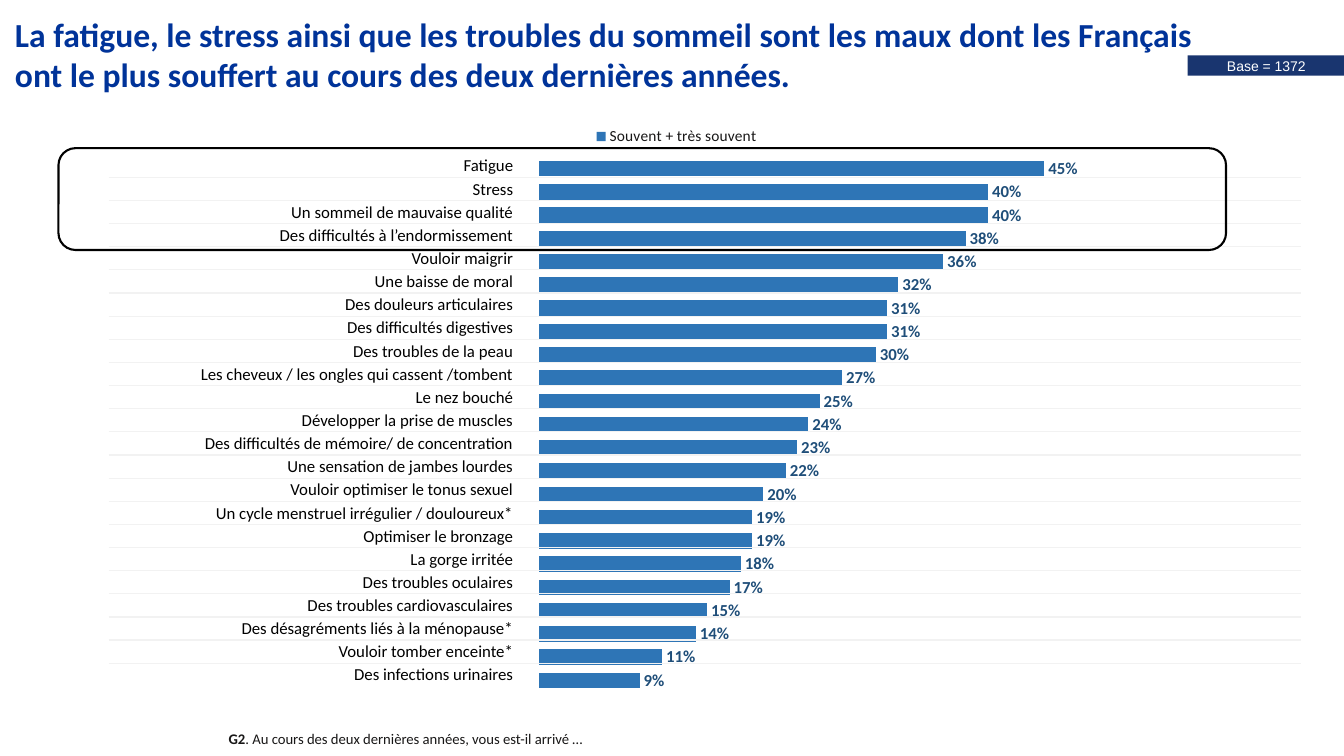
from dataclasses import dataclass

from lxml import etree
from pptx import Presentation
from pptx.chart.data import CategoryChartData
from pptx.dml.color import RGBColor
from pptx.enum.chart import XL_CHART_TYPE, XL_LABEL_POSITION, XL_LEGEND_POSITION
from pptx.enum.shapes import MSO_SHAPE
from pptx.enum.text import MSO_ANCHOR, PP_ALIGN
from pptx.oxml import parse_xml
from pptx.oxml.ns import qn
from pptx.util import Inches, Pt

BAR_CLUSTERED = XL_CHART_TYPE.BAR_CLUSTERED
OUTSIDE_END = XL_LABEL_POSITION.OUTSIDE_END
LEGEND_TOP = XL_LEGEND_POSITION.TOP
BADGE_SHAPE = MSO_SHAPE.ROUND_1_RECTANGLE
FRAME_SHAPE = MSO_SHAPE.ROUNDED_RECTANGLE
MIDDLE = MSO_ANCHOR.MIDDLE
LEFT, CENTER, RIGHT, JUSTIFY = PP_ALIGN.LEFT, PP_ALIGN.CENTER, PP_ALIGN.RIGHT, PP_ALIGN.JUSTIFY
DRAWING = "http://schemas.openxmlformats.org/drawingml/2006/main"
CHART = "http://schemas.openxmlformats.org/drawingml/2006/chart"
PLAIN_TABLE_STYLE = "{2D5ABB26-0587-4C30-8999-92F81FD0307C}"
PERCENT = '##0"%"'


@dataclass(frozen=True)
class Theme:
    """Colours, fonts and type sizes of the slide."""
    title: str = "003399"
    bar: str = "2E75B6"
    value: str = "1F4E79"
    badge: str = "002060"
    rule: str = "F2F2F2"
    ink: str = "181717"
    black: str = "000000"
    white: str = "FFFFFF"
    body_font: str = "Calibri"
    badge_font: str = "Arial"
    title_size: float = 24
    label_size: float = 12
    legend_size: float = 11
    note_size: float = 10.5
    small_size: float = 10


THEME = Theme()

AILMENTS = [
    ("Fatigue", 45),
    ("Stress", 40),
    ("Un sommeil de mauvaise qualité", 40),
    ("Des difficultés à l’endormissement", 38),
    ("Vouloir maigrir", 36),
    ("Une baisse de moral", 32),
    ("Des douleurs articulaires", 31),
    ("Des difficultés digestives", 31),
    ("Des troubles de la peau", 30),
    ("Les cheveux / les ongles qui cassent /tombent", 27),
    ("Le nez bouché", 25),
    ("Développer la prise de muscles", 24),
    ("Des difficultés de mémoire/ de concentration", 23),
    ("Une sensation de jambes lourdes", 22),
    ("Vouloir optimiser le tonus sexuel", 20),
    ("Un cycle menstruel irrégulier / douloureux*", 19),
    ("Optimiser le bronzage", 19),
    ("La gorge irritée", 18),
    ("Des troubles oculaires", 17),
    ("Des troubles cardiovasculaires", 15),
    ("Des désagréments liés à la ménopause*", 14),
    ("Vouloir tomber enceinte*", 11),
    ("Des infections urinaires", 9),
]


def set_font(font, size, color, bold=False, name=THEME.body_font):
    """Give a font its size, colour, weight and typeface."""
    font.size, font.bold, font.name = Pt(size), bold, name
    font.color.rgb = RGBColor.from_string(color)


def add_text(page, box, align=LEFT):
    """Add a wrapping text box and return its first paragraph."""
    frame = page.shapes.add_textbox(*map(Inches, box)).text_frame
    frame.word_wrap = True
    frame.paragraphs[0].alignment = align
    return frame.paragraphs[0]


def add_title(page, box):
    """Write the headline."""
    para = add_text(page, box)
    para.text = ("La fatigue, le stress ainsi que les troubles du sommeil sont les maux dont les "
                 "Français ont le plus souffert au cours des deux dernières années.")
    set_font(para.font, THEME.title_size, THEME.title, bold=True)


def add_question(page, box):
    """Write the survey question below the chart."""
    para = add_text(page, box, JUSTIFY)
    para.line_spacing = 1.07
    for text, bold in (("G2", True), (". Au cours des deux dernières années, vous est-il arrivé …", False)):
        span = para.add_run()
        span.text = text
        set_font(span.font, THEME.note_size, THEME.ink, bold)


def set_layout(parent, **places):
    """Pin a chart part at fractions of the chart area."""
    for old in parent.findall(qn("c:layout")):
        parent.remove(old)
    parts = "".join(f'<c:{key} val="{value}"/>' for key, value in places.items())
    layout = parse_xml(f'<c:layout xmlns:c="{CHART}"><c:manualLayout>{parts}</c:manualLayout></c:layout>')
    return layout


def add_bars(page, box):
    """Draw the bar chart with hidden axes."""
    data = CategoryChartData(number_format=PERCENT)
    data.categories = [str(rank) for rank in range(1, len(AILMENTS) + 1)]
    data.add_series("Souvent + très souvent", [share for _, share in AILMENTS])
    chart = page.shapes.add_chart(BAR_CLUSTERED, *map(Inches, box), data).chart
    set_font(chart.font, THEME.small_size, THEME.black)
    chart.has_title = False
    chart.category_axis.reverse_order = True
    chart.value_axis.minimum_scale, chart.value_axis.maximum_scale = 0, 50
    chart.value_axis.has_major_gridlines = False
    chart.category_axis.visible = chart.value_axis.visible = False

    plot = chart.plots[0]
    plot.gap_width, plot.vary_by_categories = 50, False
    bars = plot.series[0]
    bars.format.fill.solid()
    bars.format.fill.fore_color.rgb = RGBColor.from_string(THEME.bar)
    labels = bars.data_labels
    labels.show_value, labels.position = True, OUTSIDE_END
    labels.number_format, labels.number_format_is_linked = PERCENT, False
    set_font(labels.font, THEME.label_size, THEME.value, bold=True)

    chart.has_legend = True
    legend = chart.legend
    legend.position, legend.include_in_layout = LEGEND_TOP, False
    set_font(legend.font, THEME.legend_size, THEME.ink)
    legend_node = legend._element
    legend_node.find(qn("c:legendPos")).addnext(
        set_layout(legend_node, xMode="edge", yMode="edge", x=0.47, y=0.01))
    area = chart._chartSpace.chart.plotArea
    area.insert(0, set_layout(area, layoutTarget="inner", xMode="edge", yMode="edge",
                              x=0.43, y=0.064, w=0.425, h=0.852))


def add_rule(cell, side):
    """Draw a thin rule on one side of a table cell."""
    cell._tc.get_or_add_tcPr().append(parse_xml(
        f'<a:{side} xmlns:a="{DRAWING}" w="{Pt(1)}"><a:solidFill>'
        f'<a:srgbClr val="{THEME.rule}"/></a:solidFill></a:{side}>'))


def add_names(page, box):
    """Lay out the ailment names in a ruled table."""
    left, top, width, height = box
    count = len(AILMENTS)
    table = page.shapes.add_table(count, 2, *map(Inches, box)).table
    table.first_row = table.horz_banding = False
    table._tbl.tblPr.find(qn("a:tableStyleId")).text = PLAIN_TABLE_STYLE
    name_width = 4.02
    table.columns[0].width = Inches(name_width)
    table.columns[1].width = Inches(width - name_width)
    for index, (name, _) in enumerate(AILMENTS):
        table.rows[index].height = Inches(height / count)
        for column, text in enumerate((name, "")):
            cell = table.cell(index, column)
            cell.margin_left = cell.margin_right = cell.margin_top = Inches(0.01)
            cell.margin_bottom = 0
            cell.vertical_anchor = MIDDLE
            para = cell.text_frame.paragraphs[0]
            para.text, para.alignment = text, RIGHT
            set_font(para.font, THEME.label_size, THEME.black)
            if index > 0:
                add_rule(cell, "lnT")
            if index < count - 1:
                add_rule(cell, "lnB")
            cell.fill.background()


def add_badge(page, box):
    """Show the sample size on a translucent band."""
    badge = page.shapes.add_shape(BADGE_SHAPE, *map(Inches, box))
    badge.shadow.inherit = False
    badge.adjustments[0] = 0
    badge.fill.solid()
    badge.fill.fore_color.rgb = RGBColor.from_string(THEME.badge)
    color = badge._element.spPr.find(qn("a:solidFill"))[0]
    etree.SubElement(color, qn("a:alpha"), val="90000")
    badge.line.fill.background()
    frame = badge.text_frame
    frame.margin_left = frame.margin_right = frame.margin_top = frame.margin_bottom = 0
    frame.vertical_anchor = MIDDLE
    para = frame.paragraphs[0]
    para.text, para.alignment = "Base = 1372", CENTER
    set_font(para.font, THEME.small_size, THEME.white, name=THEME.badge_font)


def add_highlight(page, box):
    """Frame the leading ailments."""
    frame = page.shapes.add_shape(FRAME_SHAPE, *map(Inches, box))
    frame.shadow.inherit = False
    frame.fill.background()
    frame.line.color.rgb = RGBColor.from_string(THEME.black)
    frame.line.width = Pt(1.5)


def main():
    """Build the slide and save it."""
    deck = Presentation()
    deck.slide_width, deck.slide_height = Inches(13.33), Inches(7.5)
    page = deck.slides.add_slide(deck.slide_layouts[6])
    add_bars(page, (-0.3, 1.16, 13.12, 6.23))
    add_names(page, (1.08, 1.53, 11.82, 5.28))
    add_question(page, (2.17, 7.18, 10.64, 0.28))
    add_badge(page, (11.78, 0.55, 1.56, 0.2))
    add_title(page, (0.05, 0.09, 11.99, 0.49))
    add_highlight(page, (0.58, 1.47, 11.58, 1.01))
    deck.save("out.pptx")


if __name__ == "__main__":
    main()
